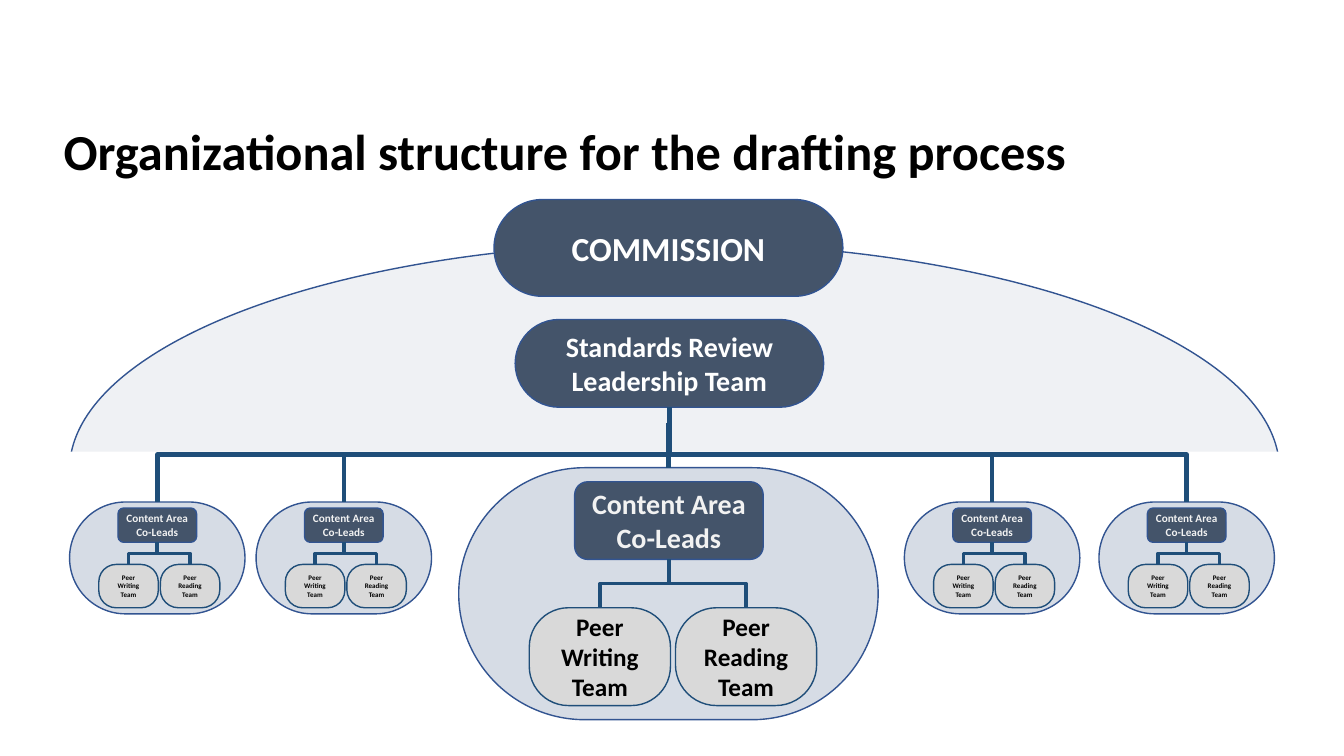
from dataclasses import dataclass

import pptx
import pptx.dml.color
import pptx.enum.shapes
import pptx.enum.text
import pptx.oxml
import pptx.oxml.ns
import pptx.util

# Content
TITLE = "Organizational structure for the drafting process"
COMMISSION = "COMMISSION"
LEADERSHIP = "Standards Review Leadership Team"
TEAMS = ("Peer Writing Team", "Peer Reading Team")
OUTER_LEFTS = (69, 1090)
INNER_LEFTS = (254, 897)


@dataclass(frozen=True)
class Theme:
    font: str = "Calibri"
    black: str = "000000"
    white: str = "FFFFFF"
    off_white: str = "F2F2F2"
    navy: str = "44546A"
    pale: str = "D6DCE5"
    gray: str = "D9D9D9"
    outline: str = "325491"
    branch: str = "1F4E79"
    title_size: int = 36
    commission_size: int = 24
    leadership_size: int = 20


@dataclass(frozen=True)
class PodStyle:
    """Boxes are (left, top, width, height) from the pod's corner."""
    top: int
    size: tuple
    lead: tuple
    lead_text: tuple
    lead_size: int
    teams: tuple
    team_size: int


THEME = Theme()
LARGE = PodStyle(464, (416, 250), (115, 14, 187, 77), ("Content Area", "Co-Leads"), 20,
                 ((70, 139, 140, 97), (215, 139, 140, 97)), 18)
SMALL = PodStyle(498, (174, 111), (48, 6, 78, 34), ("Content Area Co-Leads",), 8,
                 ((29, 62, 59, 43), (90, 62, 59, 43)), 5)
LARGE_LEFT = 455
TEAM_ROUNDING = (0.4, 0.42)
PX = 9144  # one hundredth of an inch in EMU
SHAPES = pptx.enum.shapes.MSO_SHAPE
LINES = pptx.enum.shapes.MSO_CONNECTOR
ALIGN = pptx.enum.text.PP_ALIGN


def emu(*pixels):
    return [pptx.util.Emu(round(value * PX)) for value in pixels]


def rgb(color):
    return pptx.dml.color.RGBColor.from_string(color)


def write_text(shape, *lines, size, color, align=ALIGN.CENTER, inset=None, spacing=None):
    frame = shape.text_frame
    frame.word_wrap = True
    frame.auto_size = pptx.enum.text.MSO_AUTO_SIZE.NONE
    frame.vertical_anchor = pptx.enum.text.MSO_ANCHOR.MIDDLE
    if inset is not None:
        frame.margin_left = frame.margin_right = inset
        frame.margin_top = frame.margin_bottom = inset
    frame.text = "\n".join(lines)
    for paragraph in frame.paragraphs:
        paragraph.alignment = align
        paragraph.line_spacing = spacing
        for run in paragraph.runs:
            run.font.name = THEME.font
            run.font.size = pptx.util.Pt(size)
            run.font.bold = True
            run.font.color.rgb = rgb(color)


def add_box(slide, kind, box, fill, line=THEME.outline, rounding=None):
    shape = slide.shapes.add_shape(kind, *emu(*box))
    shape.shadow.inherit = False
    shape.fill.solid()
    shape.fill.fore_color.rgb = rgb(fill)
    if line:
        shape.line.color.rgb = rgb(line)
        shape.line.width = pptx.util.Pt(1)
    else:
        shape.line.fill.background()
    if rounding is not None:
        shape.adjustments[0] = rounding
    return shape


def add_line(slide, start, end, width, kind=LINES.STRAIGHT):
    connector = slide.shapes.add_connector(kind, *emu(*start, *end))
    connector.line.color.rgb = rgb(THEME.branch)
    connector.line.width = pptx.util.Pt(width)
    connector.element.spPr.append(pptx.oxml.parse_xml(
        f"<a:effectLst {pptx.oxml.ns.nsdecls('a')}/>"))
    return connector


def add_branch(slide, start, end, width):
    """Elbow that leaves downwards: drawn on its side, then turned upright."""
    middle_x, middle_y = (start[0] + end[0]) / 2, (start[1] + end[1]) / 2
    half_width, half_height = abs(end[0] - start[0]) / 2, (end[1] - start[1]) / 2
    goes_left = end[0] < start[0]
    reach = half_height if goes_left else -half_height
    connector = add_line(slide, (middle_x - reach, middle_y - half_width),
                         (middle_x + reach, middle_y + half_width), width, LINES.ELBOW)
    frame = connector.element.spPr.find(pptx.oxml.ns.qn("a:xfrm"))
    frame.set("rot", str((90 if goes_left else 270) * 60000))


def add_pod(slide, left, style):
    def place(box):
        return (left + box[0], style.top + box[1], box[2], box[3])

    add_box(slide, SHAPES.ROUNDED_RECTANGLE, place((0, 0, *style.size)), THEME.pale, rounding=0.5)
    for name, box, rounding in zip(TEAMS, style.teams, TEAM_ROUNDING):
        team = add_box(slide, SHAPES.ROUNDED_RECTANGLE, place(box), THEME.gray,
                       THEME.branch, rounding)
        write_text(team, name, size=style.team_size, color=THEME.black)
    lead_box = place(style.lead)
    lead = add_box(slide, SHAPES.ROUNDED_RECTANGLE, lead_box, THEME.navy)
    write_text(lead, *style.lead_text, size=style.lead_size, color=THEME.off_white, inset=0)
    lead_foot = (lead_box[0] + lead_box[2] / 2, lead_box[1] + lead_box[3])
    for box in style.teams:
        team_left, team_top, team_width, _ = place(box)
        add_branch(slide, lead_foot, (team_left + team_width / 2, team_top), 2.5)


def main():
    presentation = pptx.Presentation()
    presentation.slide_width = pptx.util.Inches(13.33)
    presentation.slide_height = pptx.util.Inches(7.5)
    slide = presentation.slides.add_slide(presentation.slide_layouts[5])

    # Title
    title = slide.shapes.title
    title.left, title.top, title.width, title.height = emu(53, 120, 1188, 65)
    write_text(title, TITLE, size=THEME.title_size, color=THEME.black,
               align=ALIGN.LEFT, spacing=0.9)

    # Dome, cut flat by a white band
    dome = add_box(slide, SHAPES.OVAL, (69, 241, 1200, 450), THEME.pale)
    color = dome.element.spPr.find(".//" + pptx.oxml.ns.qn("a:srgbClr"))
    color.append(pptx.oxml.parse_xml(
        f"<a:alpha {pptx.oxml.ns.nsdecls('a')} val='39000'/>"))
    add_box(slide, SHAPES.RECTANGLE, (54, 448, 1226, 236), THEME.white, line=None)

    # Leadership team
    leadership = add_box(slide, SHAPES.ROUNDED_RECTANGLE, (511, 317, 306, 87),
                         THEME.navy, rounding=0.5)
    write_text(leadership, LEADERSHIP, size=THEME.leadership_size, color=THEME.white)

    # Content area pods
    add_pod(slide, LARGE_LEFT, LARGE)
    for left in sorted(OUTER_LEFTS + INNER_LEFTS):
        add_pod(slide, left, SMALL)

    # Lines from the leadership team to the pods
    pod_center = SMALL.size[0] / 2
    for left in OUTER_LEFTS:
        add_branch(slide, (664, 404), (left + pod_center, SMALL.top), 3.25)
    for left in INNER_LEFTS:
        center = left + pod_center
        add_line(slide, (center, 450), (center, SMALL.top), 3.25)
    large_center = LARGE_LEFT + LARGE.size[0] / 2
    add_line(slide, (large_center, 420), (large_center, LARGE.top), 3)

    # Commission
    commission = add_box(slide, SHAPES.ROUNDED_RECTANGLE, (490, 198, 346, 96),
                         THEME.navy, rounding=0.5)
    write_text(commission, COMMISSION, size=THEME.commission_size, color=THEME.white)

    presentation.save("out.pptx")


if __name__ == "__main__":
    main()
